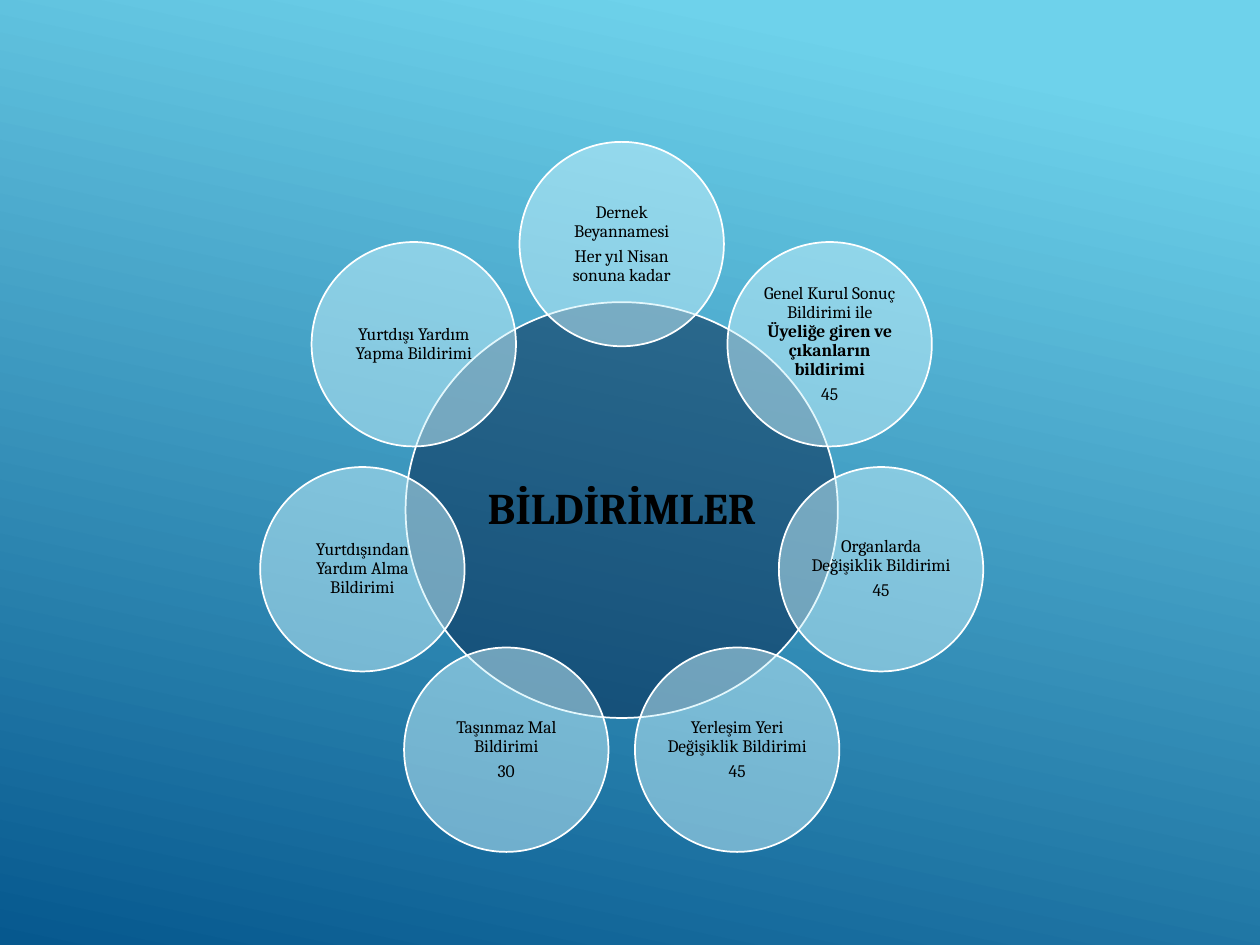
from dataclasses import dataclass
from math import cos, pi, sin

from lxml import etree
from pptx import Presentation
from pptx.dml.color import RGBColor
from pptx.enum.shapes import MSO_SHAPE
from pptx.enum.text import MSO_ANCHOR, PP_ALIGN
from pptx.oxml.ns import qn
from pptx.util import Pt

OVAL = MSO_SHAPE.OVAL
MIDDLE = MSO_ANCHOR.MIDDLE
CENTER = PP_ALIGN.CENTER

CENTER_X, RING_Y, RING_R = 355.3, 291.5, 152


@dataclass
class Run:
    text: str
    bold: bool = False


@dataclass
class Circle:
    x: float
    y: float
    width: float
    height: float
    fill: str
    size: float
    inset: float
    paragraphs: list[list[Run]]


def color(value: str) -> RGBColor:
    return RGBColor.from_string(value)


def set_attrs(obj: object, values: dict) -> None:
    for name, value in values.items():
        setattr(obj, name, value)


def draw_circle(slide, c: Circle) -> None:
    sp = slide.shapes.add_shape(OVAL, Pt(c.x - c.width / 2), Pt(c.y - c.height / 2),
                                Pt(c.width), Pt(c.height))
    sp.shadow.inherit = False
    sp.fill.solid()
    sp.fill.fore_color.rgb = color(c.fill)
    rgb = sp.fill._xPr.find(qn("a:solidFill"))[0]
    etree.SubElement(rgb, qn("a:alpha"), val="50000")
    sp.line.color.rgb = color("FFFFFF")
    sp.line.width = Pt(1)

    tf = sp.text_frame
    sides = ("margin_left", "margin_top", "margin_right", "margin_bottom")
    set_attrs(tf, {"word_wrap": True, "vertical_anchor": MIDDLE,
                   **dict.fromkeys(sides, Pt(c.inset))})
    for i, runs in enumerate(c.paragraphs):
        p = tf.add_paragraph() if i else tf.paragraphs[0]
        set_attrs(p, {"alignment": CENTER, "line_spacing": 0.9,
                      "space_before": Pt(0), "space_after": Pt(0.35 * c.size)})
        for j, run in enumerate(runs):
            if j:
                p.add_line_break()
            r = p.add_run()
            r.text = run.text
            set_attrs(r.font, {"name": "Cambria", "size": Pt(c.size), "bold": run.bold})
            r.font.color.rgb = color("000000")


# Clockwise from the top
NOTICES = [
    [[Run("Dernek Beyannamesi")], [Run("Her yıl Nisan sonuna kadar")]],
    [[Run("Genel Kurul Sonuç Bildirimi ile"),
      Run("Üyeliğe giren ve çıkanların bildirimi", True)], [Run("45")]],
    [[Run("Organlarda Değişiklik Bildirimi")], [Run("45")]],
    [[Run("Yerleşim Yeri Değişiklik Bildirimi")], [Run("45")]],
    [[Run("Taşınmaz Mal Bildirimi")], [Run("30")]],
    [[Run("Yurtdışından Yardım Alma Bildirimi")]],
    [[Run("Yurtdışı Yardım Yapma Bildirimi")]],
]


def main() -> None:
    prs = Presentation()
    prs.slide_width, prs.slide_height = Pt(720), Pt(540)
    slide = prs.slides.add_slide(prs.slide_layouts[6])

    # Background gradient
    fill = slide.background.fill
    fill.gradient()
    fill.gradient_angle = 360 - 102
    for stop, (pos, value) in zip(fill.gradient_stops, [(0.1, "6ED2EB"), (1, "06588E")]):
        stop.position = pos
        stop.color.rgb = color(value)

    # Central circle
    draw_circle(slide, Circle(CENTER_X, RING_Y, 247, 237.6, "042349", 25, 2.2,
                              [[Run("BİLDİRİMLER", True)]]))

    # Ring of notices
    for i, paragraphs in enumerate(NOTICES):
        angle = 2 * pi * i / len(NOTICES)
        draw_circle(slide, Circle(CENTER_X + RING_R * sin(angle), RING_Y - RING_R * cos(angle),
                                  116.8, 116.8, "C8F1FB", 10, 0.9, paragraphs))

    prs.save("out.pptx")


if __name__ == "__main__":
    main()
